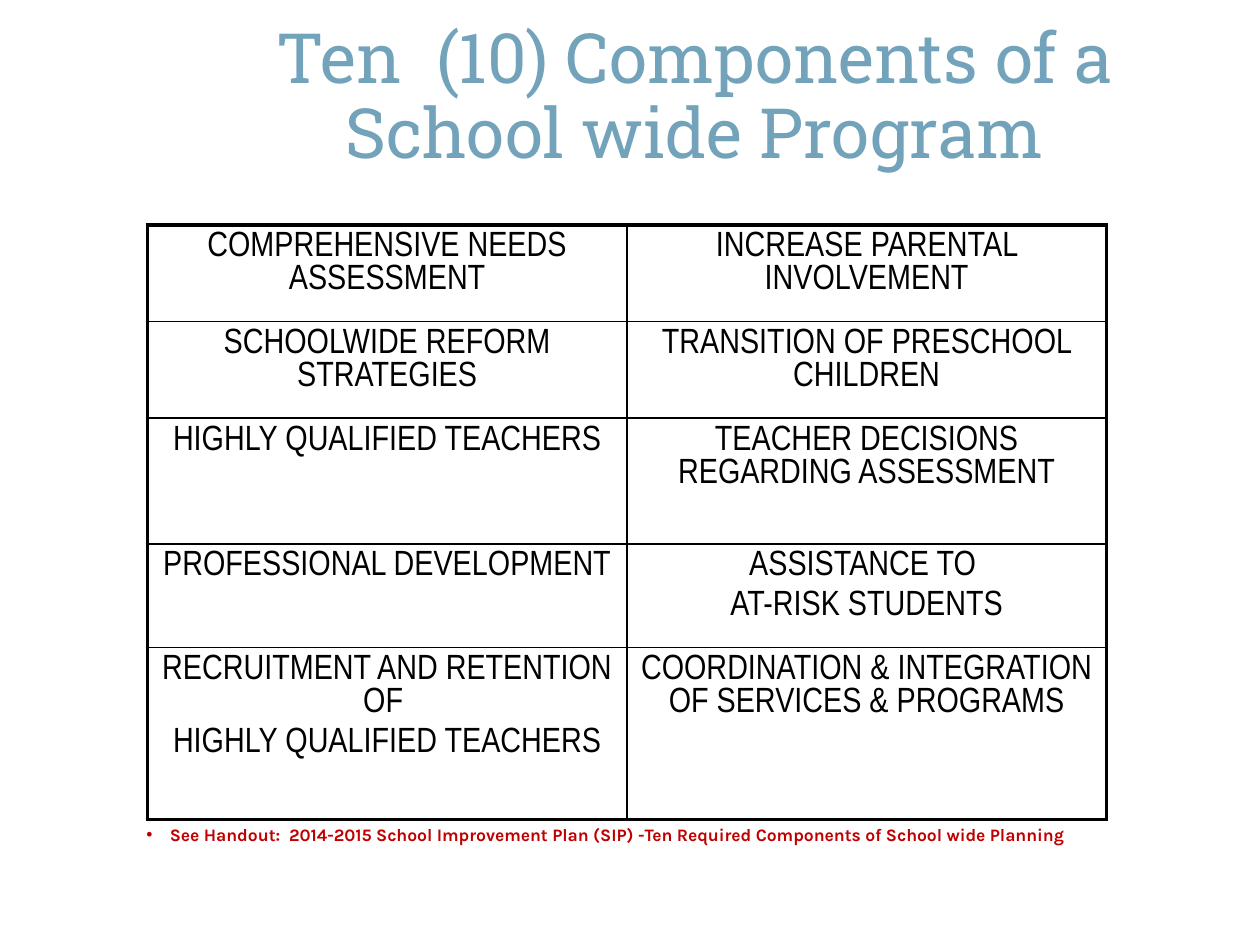
from dataclasses import dataclass

from lxml.etree import SubElement
from pptx import Presentation
from pptx.dml.color import RGBColor
from pptx.enum.text import MSO_ANCHOR as ANCHOR, PP_ALIGN as ALIGN
from pptx.oxml.ns import qn
from pptx.util import Pt

BLACK = "000000"
OUTER, INNER = 2.25, 1
COL_WIDTH = 274
TITLE_FONT = dict(name="Roboto Slab", size=Pt(39.6), bold=False)
CELL_FONT = dict(name="Arial Narrow", size=Pt(20), bold=False)
NOTE_FONT = dict(name="Karla", size=Pt(10), bold=True)


@dataclass
class Box:
    left: float
    top: float
    width: float
    height: float


@dataclass
class Row:
    height: float
    left: str
    right: str


ROWS = [
    Row(51.5, "COMPREHENSIVE NEEDS ASSESSMENT", "INCREASE PARENTAL INVOLVEMENT"),
    Row(51.5, "SCHOOLWIDE REFORM STRATEGIES", "TRANSITION OF PRESCHOOL CHILDREN"),
    Row(71.75, "HIGHLY QUALIFIED TEACHERS", "TEACHER DECISIONS REGARDING ASSESSMENT"),
    Row(56.25, "PROFESSIONAL DEVELOPMENT", "ASSISTANCE TO \nAT-RISK STUDENTS"),
    Row(98.25, "RECRUITMENT AND RETENTION OF \nHIGHLY QUALIFIED TEACHERS",
        "COORDINATION & INTEGRATION OF SERVICES & PROGRAMS"),
]


def format_runs(p, font: dict, color: str) -> None:
    for r in p.runs:
        for name, value in font.items():
            setattr(r.font, name, value)
        r.font.color.rgb = RGBColor.from_string(color)


def add_text(s, box: Box, text: str, font: dict, color: str, frame: dict):
    sp = s.shapes.add_textbox(Pt(box.left), Pt(box.top), Pt(box.width), Pt(box.height))
    tf = sp.text_frame
    for name, value in dict(word_wrap=True, **frame).items():
        setattr(tf, name, value)
    p = tf.paragraphs[0]
    p.text = text
    format_runs(p, font, color)
    return p


def add_bullet(p, indent: float) -> None:
    pPr = p._p.get_or_add_pPr()
    pPr.set("marL", str(Pt(indent)))
    pPr.set("indent", str(-Pt(indent)))
    SubElement(pPr, qn("a:buFont"), typeface="Arial")
    SubElement(pPr, qn("a:buChar"), char="•")


def set_borders(cell, widths: dict) -> None:
    tcPr = cell._tc.get_or_add_tcPr()
    for side, width in widths.items():
        ln = SubElement(tcPr, qn(f"a:ln{side}"), w=str(Pt(width)))
        SubElement(SubElement(ln, qn("a:solidFill")), qn("a:srgbClr"), val=BLACK)


def fill_cell(cell, text: str) -> None:
    cell.fill.background()
    cell.text = text
    for i, p in enumerate(cell.text_frame.paragraphs):
        p.alignment = ALIGN.CENTER
        if i:
            p.space_before = Pt(4)
        format_runs(p, CELL_FONT, BLACK)


def add_components(s, left: float, top: float, rows: list[Row]) -> None:
    height = sum(row.height for row in rows)
    table = s.shapes.add_table(len(rows), 2, Pt(left), Pt(top),
                               Pt(2 * COL_WIDTH), Pt(height)).table
    table.first_row = table.horz_banding = False
    for col in table.columns:
        col.width = Pt(COL_WIDTH)
    for i, row in enumerate(rows):
        table.rows[i].height = Pt(row.height)
        for j, text in enumerate((row.left, row.right)):
            cell = table.cell(i, j)
            edges = dict(L=j == 0, R=j == 1, T=i == 0, B=i == len(rows) - 1)
            set_borders(cell, {k: OUTER if edge else INNER for k, edge in edges.items()})
            fill_cell(cell, text)


def main() -> None:
    prs = Presentation()
    prs.slide_width, prs.slide_height = Pt(720), Pt(540)
    s = prs.slides.add_slide(prs.slide_layouts[6])

    title = add_text(s, Box(84, 0, 636, 113),
                     "Ten  (10) Components of a \vSchool wide Program ",
                     TITLE_FONT, "72A3BA", dict(vertical_anchor=ANCHOR.MIDDLE))
    title.alignment = ALIGN.CENTER
    title.line_spacing = 0.9

    add_components(s, 84.25, 128.5, ROWS)

    note = add_text(s, Box(76.5, 469.5, 607.5, 37.5),
                    "See Handout:  2014-2015 School Improvement Plan (SIP) "
                    "-Ten Required Components of School wide Planning",
                    NOTE_FONT, "C00000",
                    dict(vertical_anchor=ANCHOR.TOP, margin_top=Pt(1.5)))
    add_bullet(note, 13.5)

    prs.save("out.pptx")


if __name__ == "__main__":
    main()
